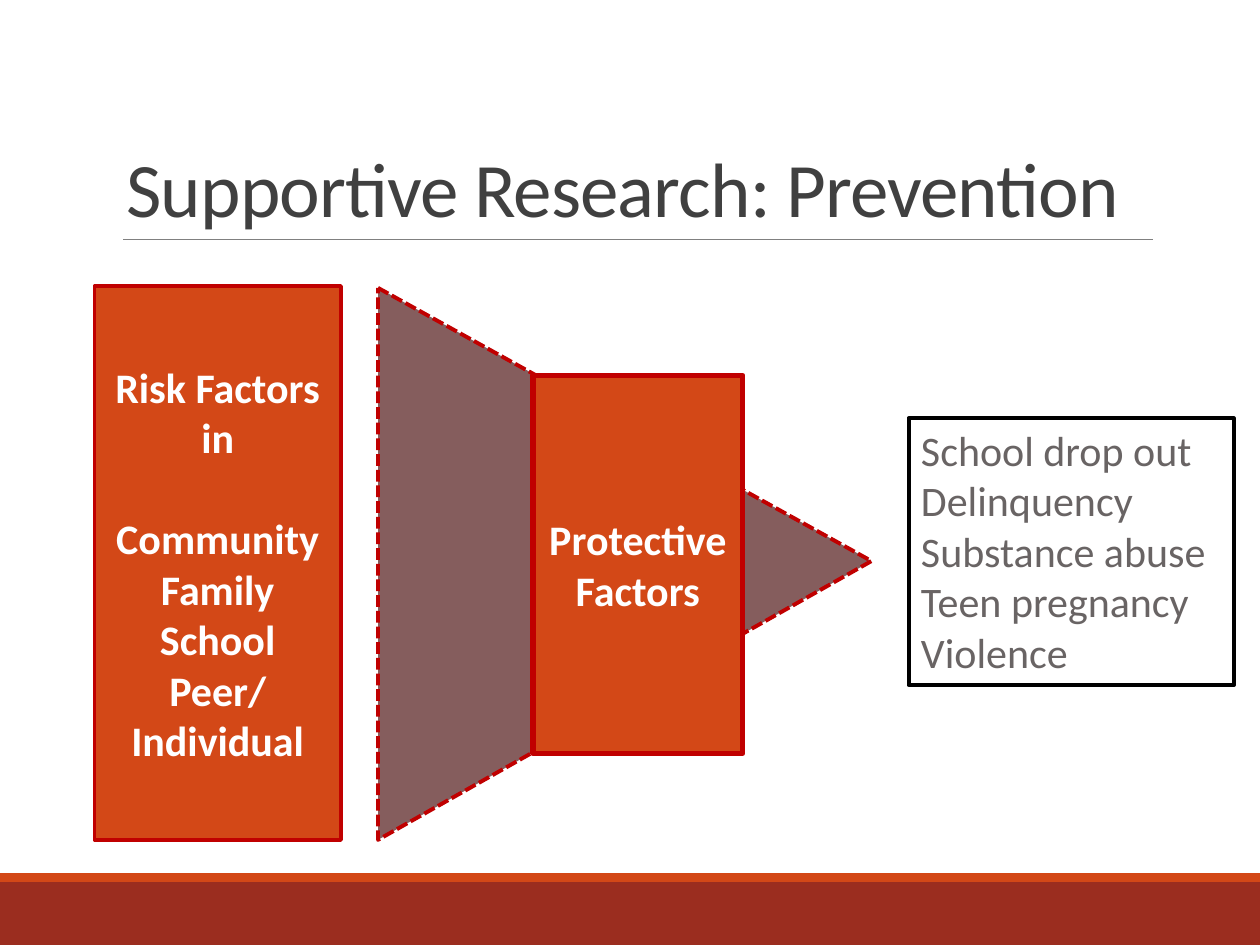
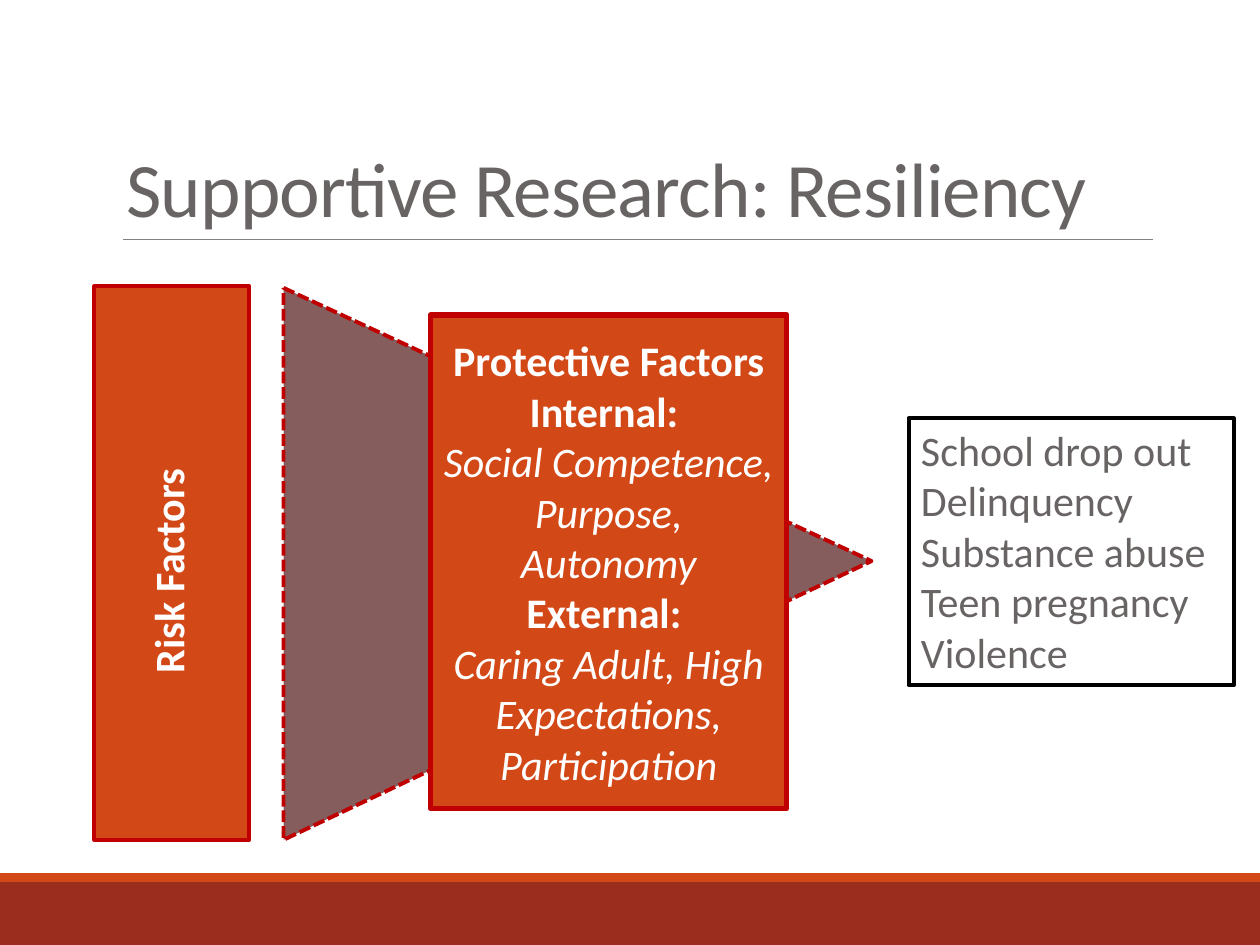
from dataclasses import dataclass

from lxml import etree
from pptx import Presentation
from pptx.dml.color import RGBColor
from pptx.enum.dml import MSO_LINE
from pptx.enum.shapes import MSO_CONNECTOR, MSO_SHAPE
from pptx.enum.text import MSO_ANCHOR, MSO_AUTO_SIZE, PP_ALIGN
from pptx.oxml.ns import qn
from pptx.shapes.autoshape import Shape
from pptx.slide import Slide
from pptx.text.text import TextFrame, _Run as Run
from pptx.util import Pt

COLORS = {
    "band": "9B2D1F",
    "accent": "D34817",
    "rule": "808080",
    "dark": "404040",
    "gray": "696464",
    "funnel": "855D5D",
    "border": "C00000",
    "black": "000000",
    "white": "FFFFFF",
}
FONT = "Calibri"
BODY_SIZE = 24
SLIDE_WIDTH, SLIDE_HEIGHT = 720, 540
BAND_TOP, STRIPE_HEIGHT = 504, 5
FUNNEL_TOP, FUNNEL_HEIGHT, FUNNEL_TIP = 164.5, 315.4, 498


@dataclass(frozen=True)
class Box:
    left: float
    top: float
    width: float
    height: float


@dataclass(frozen=True)
class Line:
    text: str
    bold: bool = True
    italic: bool = False
    gap_after: float = 0


@dataclass(frozen=True)
class Panel:
    box: Box
    lines: tuple[Line, ...] = ()
    fill: str | None = "accent"
    border: str | None = "border"
    border_width: float = 2.25
    color: str = "white"
    align: PP_ALIGN = PP_ALIGN.CENTER
    anchor: MSO_ANCHOR = MSO_ANCHOR.MIDDLE


@dataclass(frozen=True)
class Model:
    title: str
    title_color: str
    risk: Panel
    funnel_left: float
    protective: Panel
    side_label: Box | None = None


OUTCOMES = Panel(
    Box(519.2, 239, 185.8, 152.6),
    tuple(
        Line(outcome, bold=False)
        for outcome in (
            "School drop out",
            "Delinquency",
            "Substance abuse",
            "Teen pregnancy",
            "Violence",
        )
    ),
    fill=None,
    border="black",
    color="gray",
    align=PP_ALIGN.LEFT,
    anchor=MSO_ANCHOR.TOP,
)

MODELS = (
    Model(
        "Supportive Research: Prevention",
        "dark",
        Panel(
            Box(54, 163.5, 140.8, 316.5),
            (
                Line("Risk Factors"),
                Line("in", gap_after=29),
                Line("Community"),
                Line("Family"),
                Line("School"),
                Line("Peer/"),
                Line("Individual"),
            ),
        ),
        216,
        Panel(
            Box(304.5, 214.5, 120, 216),
            (Line("Protective "), Line("Factors")),
            border_width=3,
        ),
    ),
    Model(
        "Supportive Research: Resiliency",
        "gray",
        Panel(Box(54, 163.5, 88.5, 316.5)),
        162,
        Panel(
            Box(246, 180, 203.7, 282),
            (
                Line("Protective Factors"),
                Line("Internal: "),
                Line("Social Competence, Purpose, Autonomy", False, True),
                Line("External: "),
                Line("Caring Adult, High Expectations, Participation", False, True),
            ),
            border_width=3,
        ),
        Box(19.5, 297.5, 152.6, 36),
    ),
)


def rgb(name: str) -> RGBColor:
    return RGBColor.from_string(COLORS[name])


def frame(box: Box) -> tuple[Pt, Pt, Pt, Pt]:
    return Pt(box.left), Pt(box.top), Pt(box.width), Pt(box.height)


def style_run(run: Run, size: float, color: str) -> None:
    run.font.name = FONT
    run.font.size = Pt(size)
    run.font.color.rgb = rgb(color)


def write_lines(
    text_frame: TextFrame, lines: tuple[Line, ...], color: str, align: PP_ALIGN
) -> None:
    text_frame.word_wrap = True
    for index, line in enumerate(lines):
        paragraph = text_frame.add_paragraph() if index else text_frame.paragraphs[0]
        paragraph.alignment = align
        if line.gap_after:
            paragraph.space_after = Pt(line.gap_after)
        run = paragraph.add_run()
        run.text = line.text
        style_run(run, BODY_SIZE, color)
        run.font.bold = line.bold
        run.font.italic = line.italic


def add_panel(
    slide: Slide, panel: Panel, preset: MSO_SHAPE = MSO_SHAPE.RECTANGLE
) -> Shape:
    shape = slide.shapes.add_shape(preset, *frame(panel.box))
    shape.shadow.inherit = False
    if panel.fill:
        shape.fill.solid()
        shape.fill.fore_color.rgb = rgb(panel.fill)
    else:
        shape.fill.background()
    if panel.border:
        shape.line.color.rgb = rgb(panel.border)
        shape.line.width = Pt(panel.border_width)
    else:
        shape.line.fill.background()
    shape.text_frame.vertical_anchor = panel.anchor
    write_lines(shape.text_frame, panel.lines, panel.color, panel.align)
    return shape


def add_funnel(slide: Slide, left: float) -> None:
    """Draw a triangle from its base at left to the shared tip on the right."""
    length = FUNNEL_TIP - left
    shift = (length - FUNNEL_HEIGHT) / 2
    unrotated = Box(left + shift, FUNNEL_TOP - shift, FUNNEL_HEIGHT, length)
    funnel = add_panel(
        slide, Panel(unrotated, fill="funnel"), MSO_SHAPE.ISOSCELES_TRIANGLE
    )
    funnel.adjustments[0] = 0.495
    funnel.rotation = 90
    funnel.line.dash_style = MSO_LINE.SQUARE_DOT


def add_title(slide: Slide, text: str, color: str) -> None:
    title = slide.shapes.title
    title.left, title.top, title.width, title.height = frame(Box(65, 22.5, 594, 114.5))
    title.text_frame.auto_size = MSO_AUTO_SIZE.NONE
    title.text_frame.vertical_anchor = MSO_ANCHOR.BOTTOM
    paragraph = title.text_frame.paragraphs[0]
    paragraph.alignment = PP_ALIGN.LEFT
    paragraph.line_spacing = 0.85
    run = paragraph.add_run()
    run.text = text
    style_run(run, 44, color)
    run.font._element.set("spc", "-50")


def add_base(slide: Slide) -> None:
    """Draw the bottom bands and the rule under the title."""
    band = Box(0, BAND_TOP, SLIDE_WIDTH, SLIDE_HEIGHT - BAND_TOP)
    stripe = Box(0, BAND_TOP - STRIPE_HEIGHT, SLIDE_WIDTH, STRIPE_HEIGHT)
    add_panel(slide, Panel(band, fill="band", border=None))
    add_panel(slide, Panel(stripe, border=None))
    rule = slide.shapes.add_connector(
        MSO_CONNECTOR.STRAIGHT, Pt(70.5), Pt(136.8), Pt(659), Pt(136.8)
    )
    rule.line.color.rgb = rgb("rule")
    rule.line.width = Pt(0.5)
    etree.SubElement(rule._element.spPr, qn("a:effectLst"))


def add_side_label(slide: Slide, box: Box) -> None:
    label = slide.shapes.add_textbox(*frame(box))
    label.rotation = 270
    write_lines(label.text_frame, (Line("Risk Factors"),), "white", PP_ALIGN.LEFT)


def add_model(deck: Presentation, model: Model) -> None:
    slide = deck.slides.add_slide(deck.slide_layouts.get_by_name("Title Only"))
    add_base(slide)
    add_title(slide, model.title, model.title_color)
    add_panel(slide, model.risk)
    outcomes = add_panel(slide, OUTCOMES)
    outcomes.text_frame.auto_size = MSO_AUTO_SIZE.SHAPE_TO_FIT_TEXT
    add_funnel(slide, model.funnel_left)
    add_panel(slide, model.protective)
    if model.side_label:
        add_side_label(slide, model.side_label)


def main() -> None:
    deck = Presentation()
    deck.slide_width, deck.slide_height = Pt(SLIDE_WIDTH), Pt(SLIDE_HEIGHT)
    for model in MODELS:
        add_model(deck, model)
    deck.save("out.pptx")


if __name__ == "__main__":
    main()
